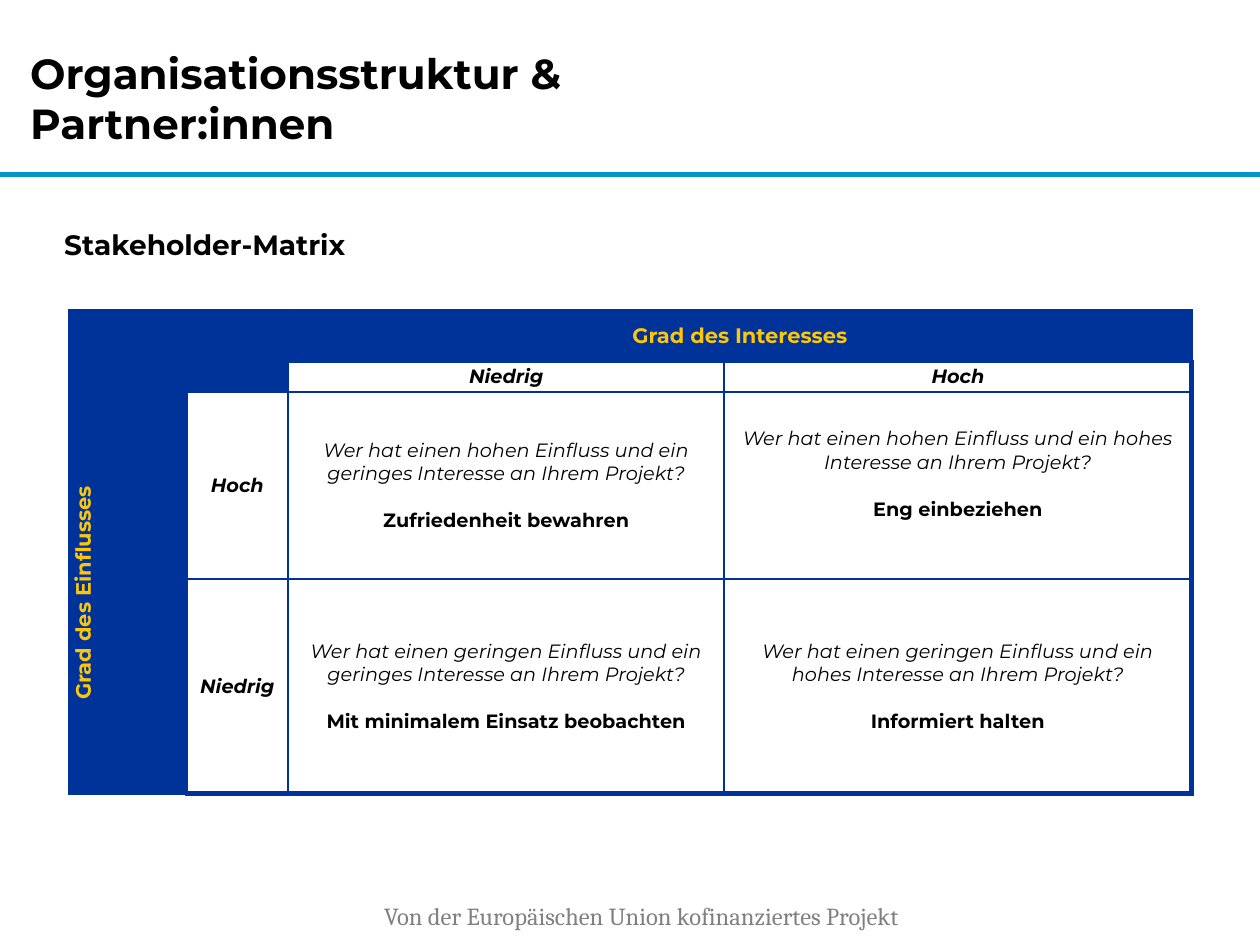
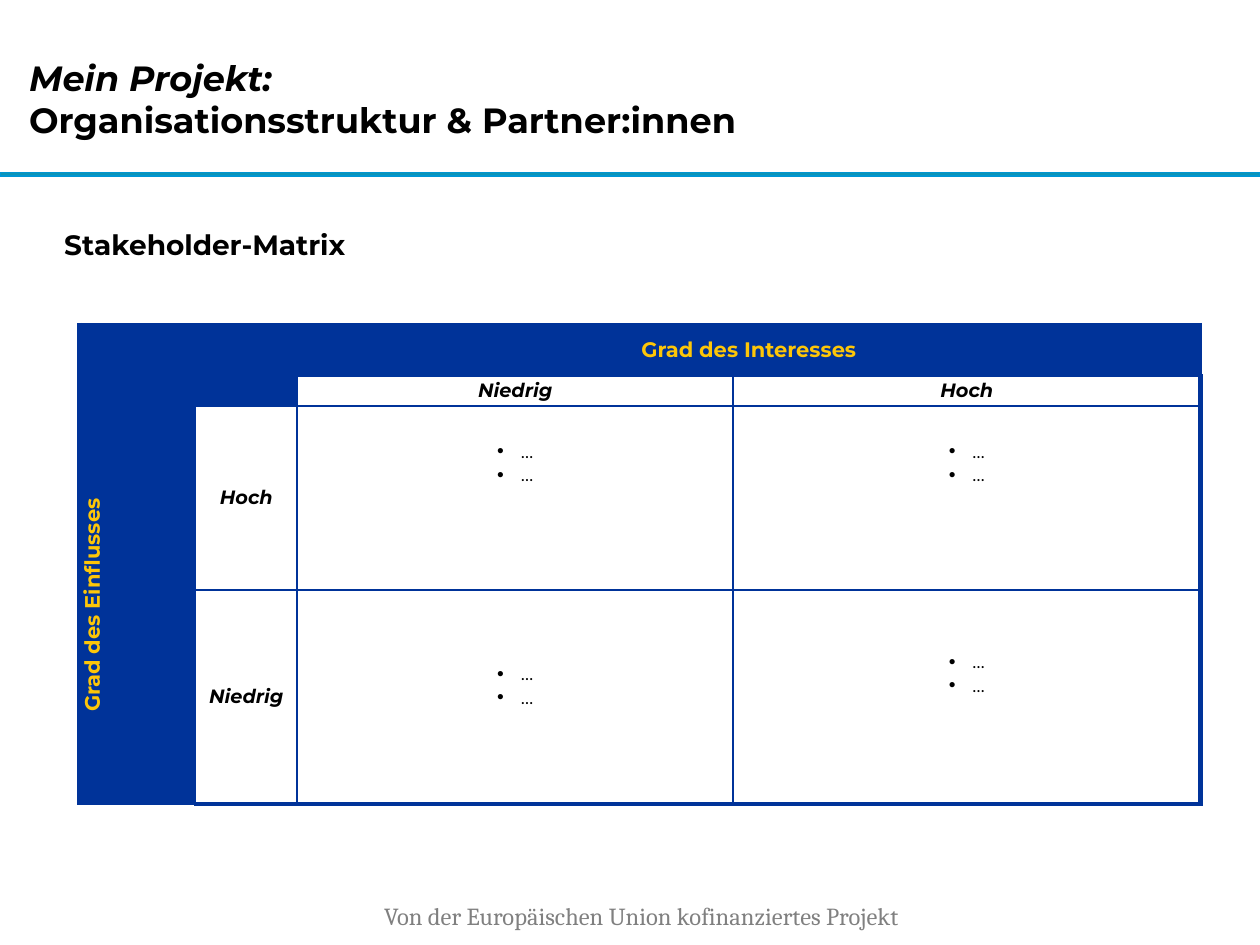
"""Build two stakeholder matrix slides: the model and the form to fill in."""
from pptx import Presentation
from pptx.dml.color import RGBColor as RGB
from pptx.enum.shapes import MSO_SHAPE as Shape
from pptx.enum.text import MSO_ANCHOR as Anchor, PP_ALIGN as Align
from pptx.oxml.ns import qn
from pptx.util import Pt
from lxml.etree import SubElement as Sub

BLACK = RGB(0, 0, 0)
WHITE = RGB(255, 255, 255)
GRAY = RGB(0x80, 0x80, 0x80)
NAVY = RGB(0x00, 0x33, 0x99)
GOLD = RGB(0xFD, 0xC6, 0x08)
TEAL = RGB(0x0C, 0x94, 0xB7)
SKY = RGB(0x00, 0x96, 0xD3)
FONT = "Montserrat"
LINE = 13.4
COLS = [66.2, 58.3, 249.1, 267.1]
HEADS = [
    (0, 2, "Grad des Interesses", 12, GOLD, False),
    (1, 2, "Niedrig", 11, BLACK, True),
    (1, 3, "Hoch", 11, BLACK, True),
    (2, 0, "Grad des Einflusses", 12, GOLD, False),
    (2, 1, "Hoch", 11, BLACK, True),
    (3, 1, "Niedrig", 11, BLACK, True),
]
MERGES = [(0, 0, 0, 1), (0, 2, 0, 3), (1, 0, 1, 1), (2, 0, 3, 0)]
NOTES = {
    (2, 2): ("hohen", "geringes", "Zufriedenheit bewahren", 0),
    (2, 3): ("hohen", "hohes", "Eng einbeziehen", 1),
    (3, 2): ("geringen", "geringes", "Mit minimalem Einsatz beobachten", 0),
    (3, 3): ("geringen", "hohes", "Informiert halten", 0),
}
LIFTS = {(2, 2): 3, (2, 3): 3, (3, 2): 1, (3, 3): 2}
SLIDES = [
    ("Organisationsstruktur &\vPartner:innen", 24, False, (17.3, 13, 543),
     (40.3, 177.8), 107, True),
    ("Mein Projekt:\vOrganisationsstruktur & Partner:innen", 20, True,
     (16.6, 13.7, 523.4), (45.4, 185.8), 105, False),
]


def style(par, size, color=BLACK, bold=True, slant=False, face=FONT):
    """Format every run of a paragraph."""
    for run in par.runs:
        font = run.font
        font.name, font.size = face, Pt(size)
        font.bold, font.italic = bold, slant
        font.color.rgb = color


def box(slide, left, top, width, height, text, inset=(0, 0)):
    """Add a wrapping text box and return its frame."""
    spot = [Pt(n) for n in (left, top, width, height)]
    frame = slide.shapes.add_textbox(*spot).text_frame
    frame.word_wrap = True
    frame.margin_left = frame.margin_right = Pt(inset[0])
    frame.margin_top = frame.margin_bottom = Pt(inset[1])
    frame.text = text
    return frame


deck = Presentation()
deck.slide_width, deck.slide_height = Pt(720), Pt(540)

for title, size, slant, place, start, tall, model in SLIDES:
    slide = deck.slides.add_slide(deck.slide_layouts[6])

    band = slide.shapes.add_shape(Shape.RECTANGLE, 0, Pt(98.6), Pt(720), Pt(2.2))
    band.shadow.inherit = False
    band.fill.solid()
    band.fill.fore_color.rgb = TEAL
    band.line.color.rgb = SKY
    band.line.width = Pt(1)

    foot = box(slide, 212.4, 511.2, 337.7, 24.5,
               "Von der Europäischen Union kofinanziertes Projekt", (7.2, 3.6))
    style(foot.paragraphs[0], 14, GRAY, False, face="Cambria")

    head = box(slide, *place, 85.7, title)
    head.vertical_anchor = Anchor.MIDDLE
    style(head.paragraphs[0], size)
    head.paragraphs[0].runs[0].font.italic = slant

    body = box(slide, 36.7, 126.7, 611.3, 364.3, "Stakeholder-Matrix", (0, 3.6))
    style(body.paragraphs[0], 16)

    rows = [28.8, 17.5, tall, 122.4]
    spot = [Pt(n) for n in (*start, sum(COLS), sum(rows))]
    grid = slide.shapes.add_table(4, 4, *spot).table
    grid.first_row = grid.horz_banding = False
    for col, wide in zip(grid.columns, COLS):
        col.width = Pt(wide)
    for row, high in zip(grid.rows, rows):
        row.height = Pt(high)

    for r in range(4):
        for c in range(4):
            cell = grid.cell(r, c)
            cell.vertical_anchor = Anchor.MIDDLE
            cell.margin_left = cell.margin_right = Pt(4.3)
            cell.margin_top = cell.margin_bottom = 0
            cell.text_frame.paragraphs[0].font.size = Pt(11)
            props = cell._tc.get_or_add_tcPr()
            edges = {"L": c == 0, "R": c == 3, "T": r == 0, "B": r == 3}
            for side, outer in edges.items():
                edge = Sub(props, qn("a:ln" + side), w=str(Pt(3 if outer else 1.5)))
                fill = Sub(edge, qn("a:solidFill"))
                Sub(fill, qn("a:srgbClr"), val=str(NAVY))
            cell.fill.solid()
            dark = r == 0 or c == 0 or (r, c) == (1, 1)
            cell.fill.fore_color.rgb = NAVY if dark else WHITE

    for r, c, low, last in MERGES:
        grid.cell(r, c).merge(grid.cell(low, last))

    for r, c, text, points, color, tilt in HEADS:
        par = grid.cell(r, c).text_frame.paragraphs[0]
        par.text = text
        par.alignment = Align.CENTER
        style(par, points, color, True, tilt)
    side = grid.cell(2, 0)
    side.vertical_anchor = Anchor.TOP
    side._tc.get_or_add_tcPr().set("vert", "vert270")

    for (r, c), (power, stake, advice, lift) in NOTES.items():
        cell = grid.cell(r, c)
        frame = cell.text_frame
        if model:
            ask = (f"Wer hat einen {power} Einfluss und ein {stake} "
                   "Interesse an Ihrem Projekt?")
            frame.text = ask + "\n" + advice
            style(frame.paragraphs[0], 11, bold=False, slant=True)
            style(frame.paragraphs[1], 11)
            frame.paragraphs[1].space_before = Pt(LINE)
        else:
            lift = LIFTS[r, c]
            frame.text = "…\n…"
            for par in frame.paragraphs:
                props = par._p.get_or_add_pPr()
                props.set("marL", str(Pt(13.5)))
                props.set("indent", str(Pt(-13.5)))
                for old in list(props):
                    props.remove(old)
                Sub(props, qn("a:buFont"), typeface="Arial")
                Sub(props, qn("a:buChar"), char="•")
                style(par, 11, bold=False)
        for par in frame.paragraphs:
            par.alignment = Align.CENTER
        cell.margin_bottom = Pt(lift * LINE)

deck.save("out.pptx")
